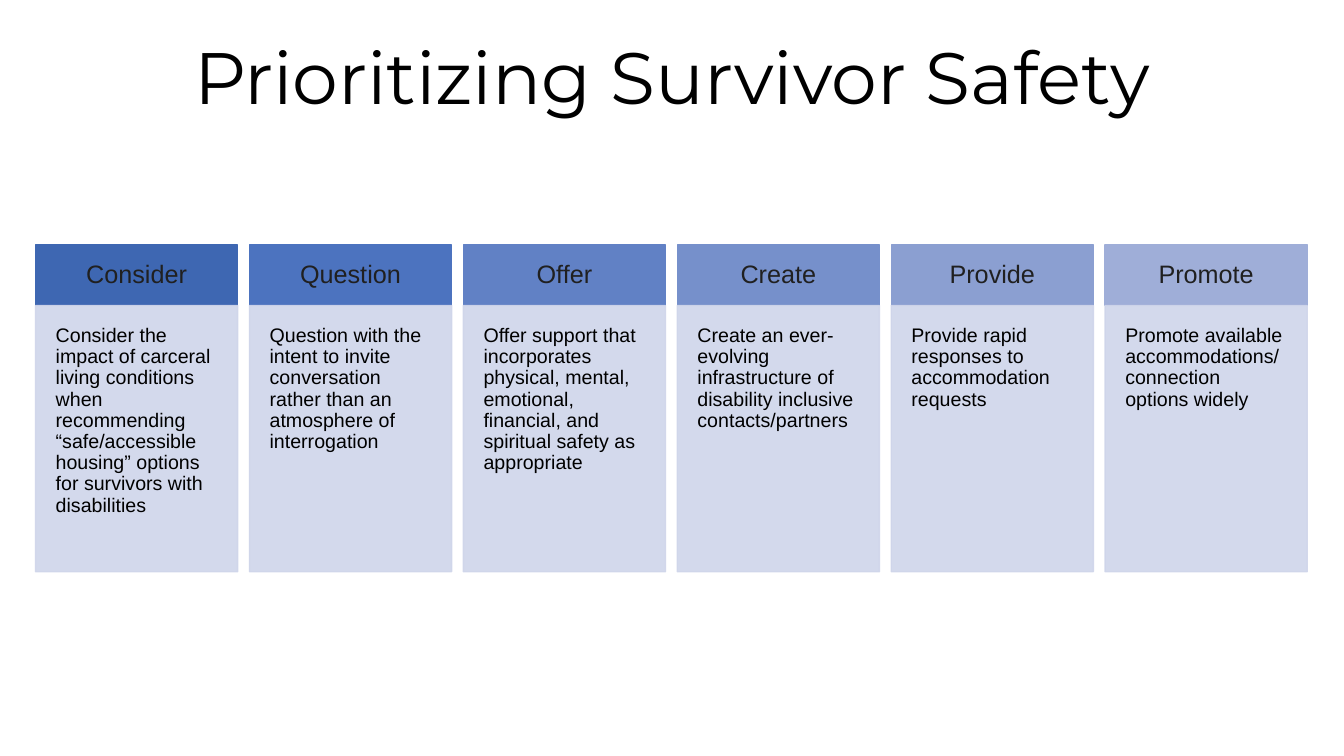
from dataclasses import dataclass

from lxml import etree
from pptx import Presentation
from pptx.dml.color import RGBColor
from pptx.enum.shapes import MSO_SHAPE
from pptx.enum.text import MSO_ANCHOR, PP_ALIGN
from pptx.oxml.ns import qn
from pptx.util import Pt

RECTANGLE = MSO_SHAPE.RECTANGLE
TOP, MIDDLE = MSO_ANCHOR.TOP, MSO_ANCHOR.MIDDLE
LEFT, CENTER = PP_ALIGN.LEFT, PP_ALIGN.CENTER


@dataclass(frozen=True)
class Theme:
    background: str = "FFFFFF"
    text: str = "000000"
    header_text: str = "202020"
    body_fill: str = "CFD5EA"
    body_opacity: str = "90000"
    title_font: str = "Montserrat"
    font: str = "Arial"
    title_size: int = 52
    header_size: int = 18
    body_size: int = 14


theme = Theme()


def write_text(box, text, font, size, color, align, anchor, inset):
    frame = box.text_frame
    frame.word_wrap = True
    frame.vertical_anchor = anchor
    frame.margin_left = frame.margin_right = Pt(inset)
    frame.margin_top = frame.margin_bottom = Pt(inset)
    frame.text = text
    para = frame.paragraphs[0]
    para.alignment = align
    para.line_spacing = 0.9
    span = para.runs[0]
    span.font.name = font
    span.font.size = Pt(size)
    span.font.color.rgb = RGBColor.from_string(color)


def add_panel(page, left, top, width, height, color):
    panel = page.shapes.add_shape(RECTANGLE, Pt(left), Pt(top), Pt(width), Pt(height))
    panel.shadow.inherit = False
    panel.fill.solid()
    panel.fill.fore_color.rgb = RGBColor.from_string(color)
    panel.line.color.rgb = RGBColor.from_string(color)
    panel.line.width = Pt(1)
    return panel


deck = Presentation()
deck.slide_width = Pt(960)
deck.slide_height = Pt(540)
page = deck.slides.add_slide(deck.slide_layouts[6])
page.background.fill.solid()
page.background.fill.fore_color.rgb = RGBColor.from_string(theme.background)

title = page.shapes.add_textbox(Pt(66), Pt(28), Pt(828), Pt(60))
write_text(title, "Prioritizing Survivor Safety", theme.title_font, theme.title_size,
           theme.text, CENTER, MIDDLE, 0)

columns = [
    ("Consider", "3E67B2", "Consider the impact of carceral living conditions when recommending "
     "“safe/accessible housing” options for survivors with disabilities"),
    ("Question", "4C73BF", "Question with the intent to invite conversation rather than an "
     "atmosphere of interrogation"),
    ("Offer", "6181C5", "Offer support that incorporates physical, mental, emotional, financial, "
     "and spiritual safety as appropriate"),
    ("Create", "7690CB", "Create an ever-evolving infrastructure of disability inclusive "
     "contacts/partners"),
    ("Provide", "8B9FD1", "Provide rapid responses to accommodation requests"),
    ("Promote", "9FAED8", "Promote available accommodations/connection options widely"),
]
first_left, pitch, column_width = 25.4, 152.8, 144.4
header_top, header_height, body_height = 175, 43.2, 190.2

for index, (heading, color, advice) in enumerate(columns):
    left = first_left + index * pitch
    header = add_panel(page, left, header_top, column_width, header_height, color)
    write_text(header, heading, theme.font, theme.header_size,
               theme.header_text, CENTER, MIDDLE, 11.5)

    body = add_panel(page, left, header_top + header_height, column_width, body_height,
                     theme.body_fill)
    for color_node in body.element.spPr.iter(qn("a:srgbClr")):
        etree.SubElement(color_node, qn("a:alpha"), val=theme.body_opacity)
    write_text(body, advice, theme.font, theme.body_size, theme.text, LEFT, TOP, 14.4)

deck.save("out.pptx")
